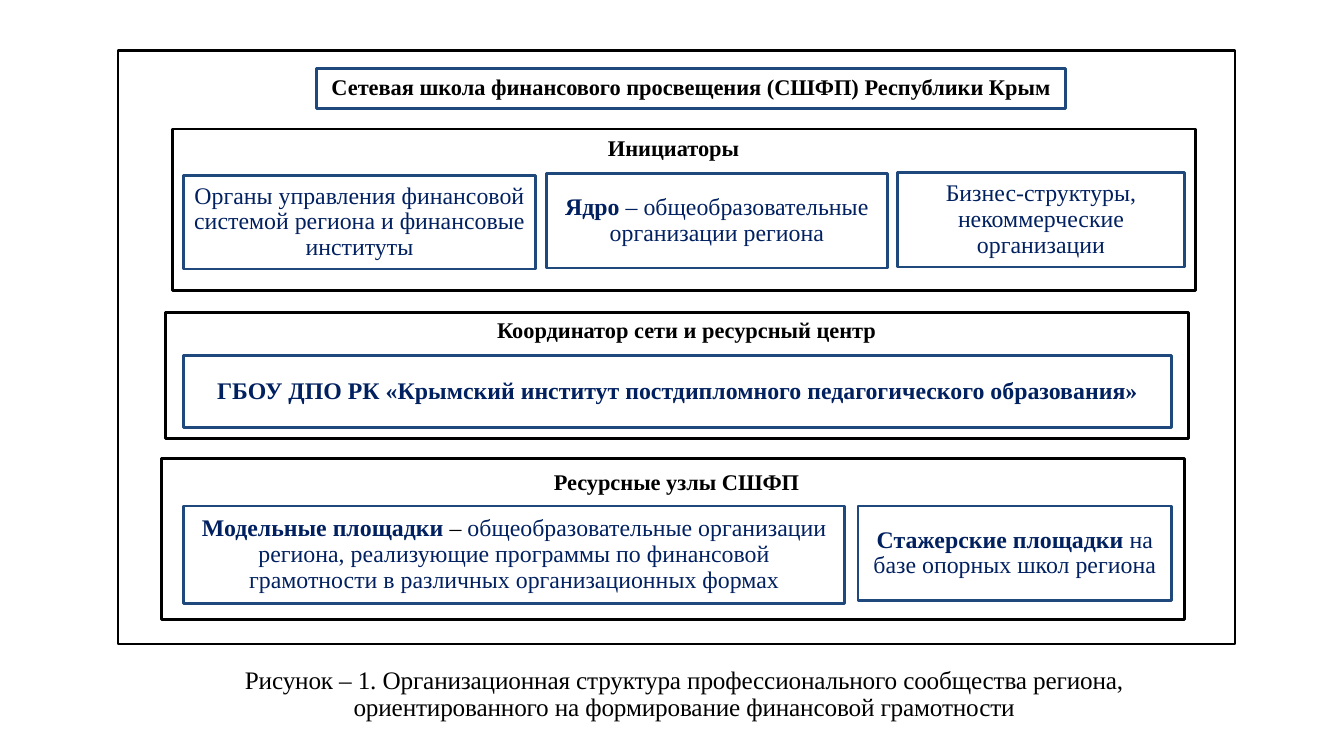
from pptx import Presentation
from pptx import util as u
from pptx.dml.color import RGBColor
from pptx.enum import shapes, text

COLOURS = {"white": "FFFFFF", "black": "000000", "border": "1F497D", "navy": "002060"}
FONT = "Times New Roman"


def colour(name):
    return RGBColor.from_string(COLOURS[name])


def format_span(span, size, ink, bold=False):
    span.font.name = FONT
    span.font.size = u.Pt(size)
    span.font.bold = bold
    span.font.color.rgb = colour(ink)


def add_box(page, place, border=None):
    box = page.shapes.add_shape(
        shapes.MSO_SHAPE.RECTANGLE, *[u.Inches(length) for length in place])
    box.shadow.inherit = False
    box.fill.solid()
    box.fill.fore_color.rgb = colour("white")
    if border:
        box.line.color.rgb = colour(border)
        box.line.width = u.Pt(2)
    else:
        box.line.fill.background()
    return box


def add_label(page, place, spans, size=17, border="border", space_after=10):
    frame = add_box(page, place, border).text_frame
    frame.word_wrap = True
    frame.vertical_anchor = text.MSO_ANCHOR.MIDDLE
    para = frame.paragraphs[0]
    para.alignment = text.PP_ALIGN.CENTER
    para.line_spacing = 0.9
    para.space_after = u.Pt(space_after)
    for wording, ink, bold in spans:
        span = para.add_run()
        span.text = wording
        format_span(span, size, ink, bold)


def add_heading(page, left, top, wording):
    add_label(page, (left, top, 5.82, 0.34), [(wording, "black", True)], 16, None)


def add_caption(page, place, lines):
    box = page.shapes.add_textbox(*[u.Inches(length) for length in place])
    frame = box.text_frame
    frame.word_wrap = True
    frame.auto_size = text.MSO_AUTO_SIZE.SHAPE_TO_FIT_TEXT
    frame.text = "\n".join(lines)
    for para in frame.paragraphs:
        para.alignment = text.PP_ALIGN.CENTER
        para.line_spacing = 0.9
        para._p.get_or_add_pPr().set("indent", str(u.Inches(0.49)))
        for span in para.runs:
            format_span(span, 18, "black")
            span.font._element.set("spc", "-10")


def main():
    deck = Presentation()
    deck.slide_width, deck.slide_height = u.Inches(13.33), u.Inches(7.5)
    page = deck.slides.add_slide(deck.slide_layouts[6])

    add_box(page, (1.17, 0.5, 11.08, 5.89), "black")
    for left, top, height in [(1.71, 1.28, 1.6), (1.64, 3.1, 1.25), (1.6, 4.55, 1.6)]:
        add_box(page, (left, top, 10.15, height), "black")

    add_label(page, (3.14, 0.68, 7.43, 0.4), [
        ("Сетевая школа финансового просвещения (СШФП) Республики Крым", "black", True)], 16)

    add_heading(page, 3.77, 1.31, "Инициаторы")
    add_label(page, (1.82, 1.74, 3.49, 0.93), [
        ("Органы управления финансовой системой региона и финансовые институты",
         "navy", False)])
    add_label(page, (5.42, 1.72, 3.38, 0.94), [
        ("Ядро ", "navy", True),
        ("– общеобразовательные организации региона", "navy", False)])
    add_label(page, (8.9, 1.71, 2.85, 0.94), [
        ("Бизнес-структуры, некоммерческие организации", "navy", False)], space_after=0)

    add_heading(page, 3.9, 3.12, "Координатор сети и ресурсный центр")
    add_label(page, (1.82, 3.53, 9.8, 0.71), [
        ("ГБОУ ДПО РК «Крымский институт постдипломного педагогического образования»",
         "navy", True)], space_after=0)

    add_heading(page, 3.8, 4.62, "Ресурсные узлы СШФП")
    add_label(page, (1.82, 5.02, 6.56, 0.97), [
        ("Модельные площадки ", "navy", True),
        ("– ", "black", False),
        ("общеобразовательные организации региона, реализующие программы "
         "по финансовой грамотности в различных организационных формах", "navy", False)])
    add_label(page, (8.51, 5.02, 3.11, 0.94), [
        ("Стажерские площадки ", "navy", True),
        ("на базе опорных школ региона", "navy", False)])

    add_caption(page, (1.6, 6.57, 9.88, 0.65), [
        "Рисунок – 1. Организационная структура профессионального сообщества региона,",
        "ориентированного на формирование финансовой грамотности"])

    deck.save("out.pptx")


if __name__ == "__main__":
    main()
